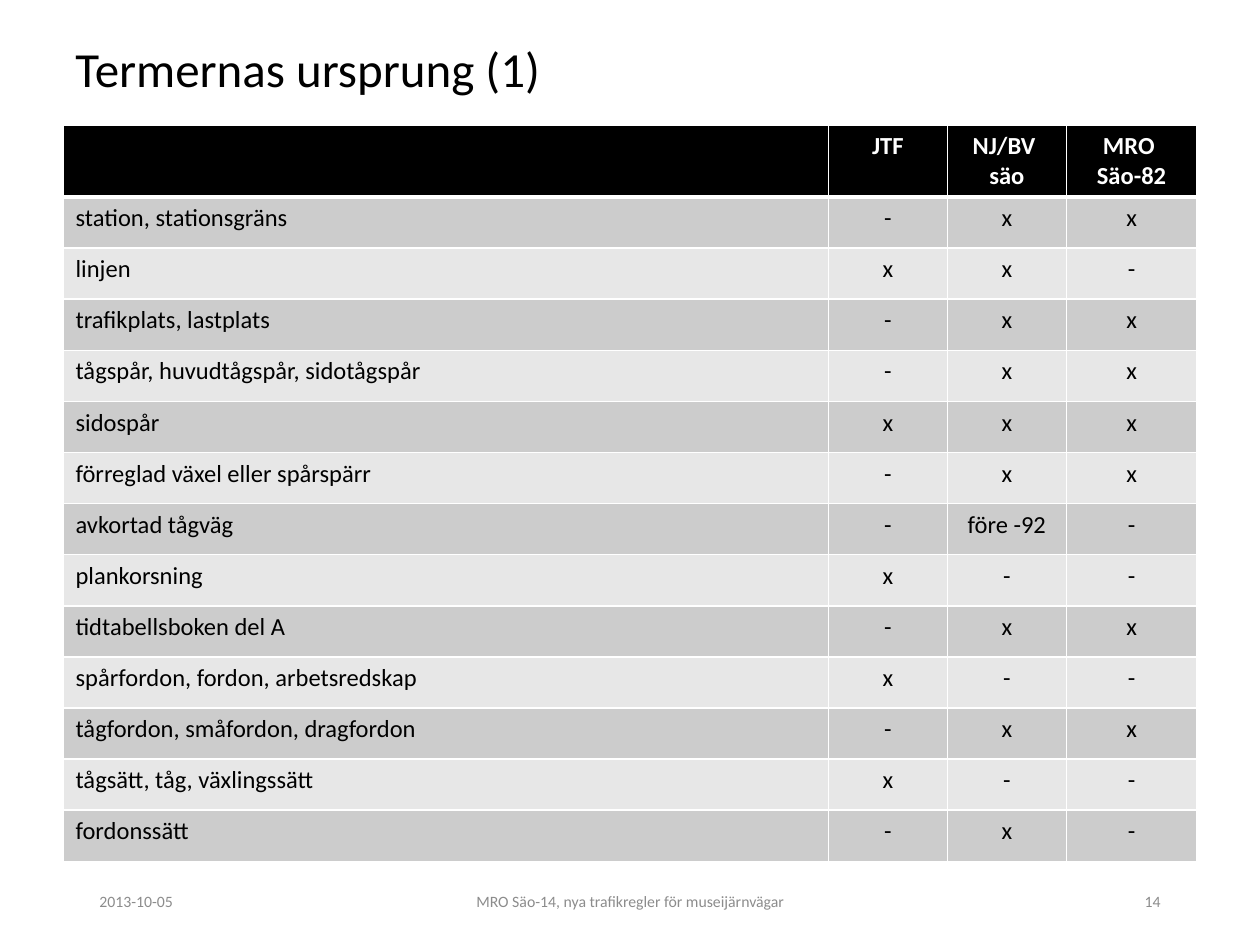
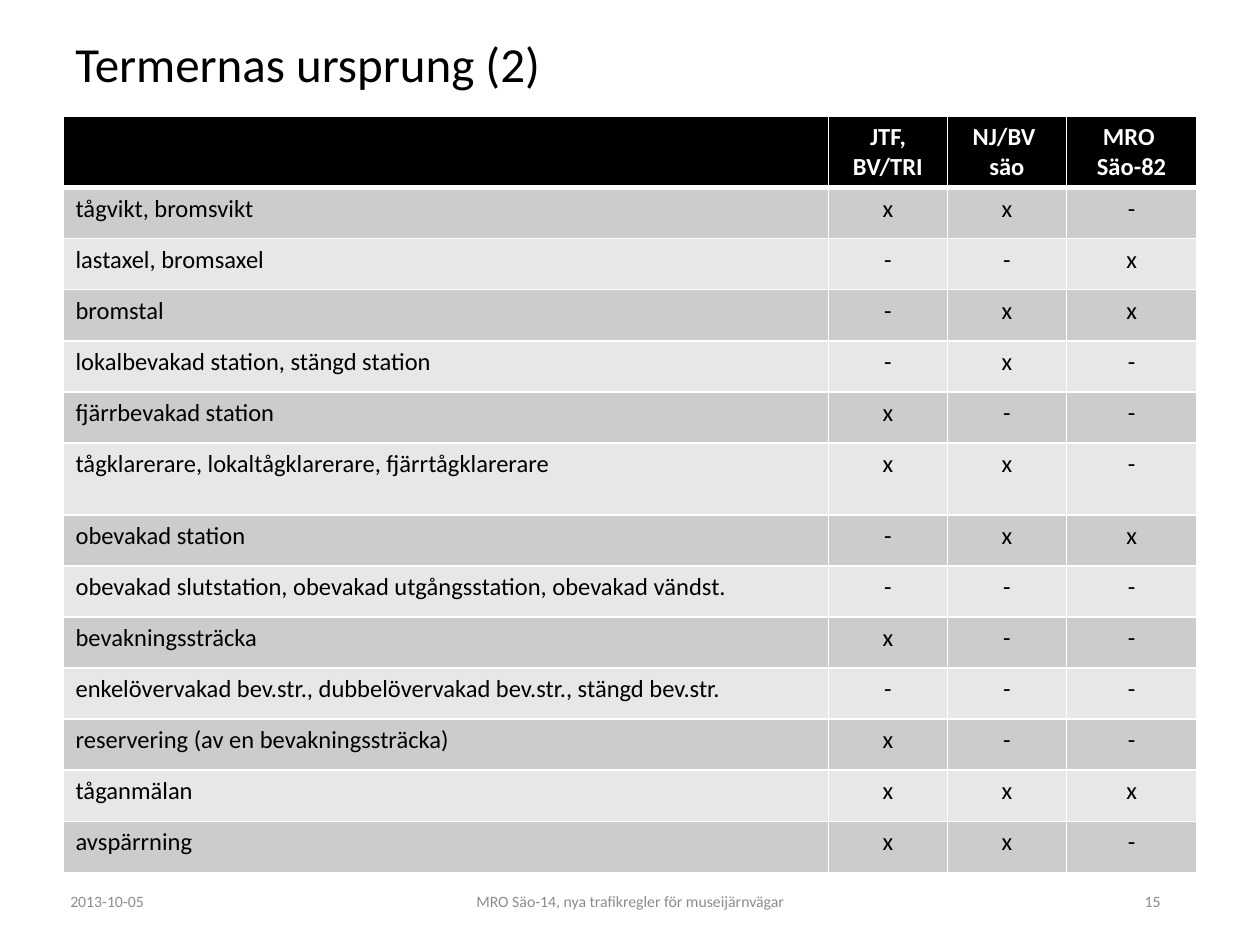
from pptx import Presentation
from pptx.dml.color import RGBColor
from pptx.enum.text import MSO_ANCHOR, PP_ALIGN
from pptx.oxml import parse_xml
from pptx.oxml.ns import nsdecls
from pptx.util import Pt

BLACK = RGBColor(0x00, 0x00, 0x00)
WHITE = RGBColor(0xFF, 0xFF, 0xFF)
DARK = RGBColor(0xCC, 0xCC, 0xCC)
LIGHT = RGBColor(0xE7, 0xE7, 0xE7)
GREY = RGBColor(0x8C, 0x8C, 0x8C)
LEFT, CENTER, RIGHT = PP_ALIGN.LEFT, PP_ALIGN.CENTER, PP_ALIGN.RIGHT
MIDDLE = MSO_ANCHOR.MIDDLE

FONT = "Calibri"
DATE = "2013-10-05"
FOOTER = "MRO Säo-14, nya trafikregler för museijärnvägar"
WIDTHS = (437.4, 68, 68, 74.6)
ROW, TALL = 29.2, 41

TERMS = [
    ("", "JTF", "NJ/BV \vsäo", "MRO \vSäo-82"),
    ("station, stationsgräns", "-", "x", "x"),
    ("linjen", "x", "x", "-"),
    ("trafikplats, lastplats", "-", "x", "x"),
    ("tågspår, huvudtågspår, sidotågspår", "-", "x", "x"),
    ("sidospår", "x", "x", "x"),
    ("förreglad växel eller spårspärr", "-", "x", "x"),
    ("avkortad tågväg", "-", "före -92", "-"),
    ("plankorsning", "x", "-", "-"),
    ("tidtabellsboken del A", "-", "x", "x"),
    ("spårfordon, fordon, arbetsredskap", "x", "-", "-"),
    ("tågfordon, småfordon, dragfordon", "-", "x", "x"),
    ("tågsätt, tåg, växlingssätt", "x", "-", "-"),
    ("fordonssätt", "-", "x", "-"),
]
MORE = [
    ("", "JTF, BV/TRI", *TERMS[0][2:]),
    ("tågvikt, bromsvikt", "x", "x", "-"),
    ("lastaxel, bromsaxel", "-", "-", "x"),
    ("bromstal", "-", "x", "x"),
    ("lokalbevakad station, stängd station", "-", "x", "-"),
    ("fjärrbevakad station", "x", "-", "-"),
    ("tågklarerare, lokaltågklarerare, fjärrtågklarerare", "x", "x", "-"),
    ("obevakad station", "-", "x", "x"),
    ("obevakad slutstation, obevakad utgångsstation, obevakad vändst.", "-", "-", "-"),
    ("bevakningssträcka", "x", "-", "-"),
    ("enkelövervakad bev.str., dubbelövervakad bev.str., stängd bev.str.", "-", "-", "-"),
    ("reservering (av en bevakningssträcka)", "x", "-", "-"),
    ("tåganmälan", "x", "x", "x"),
    ("avspärrning", "x", "x", "-"),
]


class Deck:
    """Holds the shared style and the slide being built."""

    def __init__(self):
        self.show = Presentation()
        self.show.slide_width, self.show.slide_height = Pt(720), Pt(540)

    def start(self):
        self.slide = self.show.slides.add_slide(self.show.slide_layouts[6])

    def style(self, para, size, color, align=LEFT, bold=False):
        para.alignment = align
        font = para.font
        font.name, font.size, font.bold = FONT, Pt(size), bold
        font.color.rgb = color

    def text(self, words, left, top, width, height, size, color, align=LEFT):
        box = self.slide.shapes.add_textbox(Pt(left), Pt(top), Pt(width), Pt(height))
        frame = box.text_frame
        frame.word_wrap = True
        frame.vertical_anchor = MIDDLE
        frame.text = words
        para = frame.paragraphs[0]
        self.style(para, size, color, align)
        return para

    def title(self, words, height):
        self.text(words, 36, 21.6, 648, height, 28, BLACK).line_spacing = 0.9

    def footer(self, number, left, width):
        self.text(DATE, left, 500.4, width, 28.8, 9, GREY)
        self.text(FOOTER, 238.3, 500.4, 243.4, 28.8, 9, GREY, CENTER)
        self.text(number, 508.3, 500.4, 162, 28.8, 9, GREY, RIGHT)

    def border(self, cell, top, bottom):
        props = cell._tc.get_or_add_tcPr()
        sides = {"lnL": 1, "lnR": 1, "lnT": top, "lnB": bottom}
        for spot, (side, width) in enumerate(sides.items()):
            props.insert(spot, parse_xml(
                f'<a:{side} {nsdecls("a")} w="{Pt(width)}"><a:solidFill>'
                f'<a:srgbClr val="{WHITE}"/></a:solidFill></a:{side}>'))

    def table(self, rows, top, tall=()):
        heights = [TALL if r == 0 or r in tall else ROW for r in range(len(rows))]
        grid = self.slide.shapes.add_table(
            len(rows), len(WIDTHS), Pt(36), Pt(top), Pt(sum(WIDTHS)), Pt(sum(heights))).table
        grid.first_row = grid.horz_banding = False
        for column, width in zip(grid.columns, WIDTHS):
            column.width = Pt(width)
        for r, (row, height) in enumerate(zip(rows, heights)):
            grid.rows[r].height = Pt(height)
            head = r == 0
            shade = BLACK if head else DARK if r % 2 else LIGHT
            for c, words in enumerate(row):
                cell = grid.cell(r, c)
                cell.fill.solid()
                cell.fill.fore_color.rgb = shade
                self.border(cell, 3 if r == 1 else 1, 3 if head else 1)
                cell.text_frame.text = words
                self.style(cell.text_frame.paragraphs[0], 14, WHITE if head else BLACK,
                           CENTER if c else LEFT, head)


def main():
    deck = Deck()
    deck.start()
    deck.title("Termernas ursprung (1)", 38.9)
    deck.table(TERMS, 71.6)
    deck.footer("14", 49.7, 162)
    deck.start()
    deck.title("Termernas ursprung (2)", 33.1)
    deck.table(MORE, 66.2, tall=(6,))
    deck.footer("15", 33.1, 167.8)
    deck.show.save("out.pptx")


if __name__ == "__main__":
    main()
